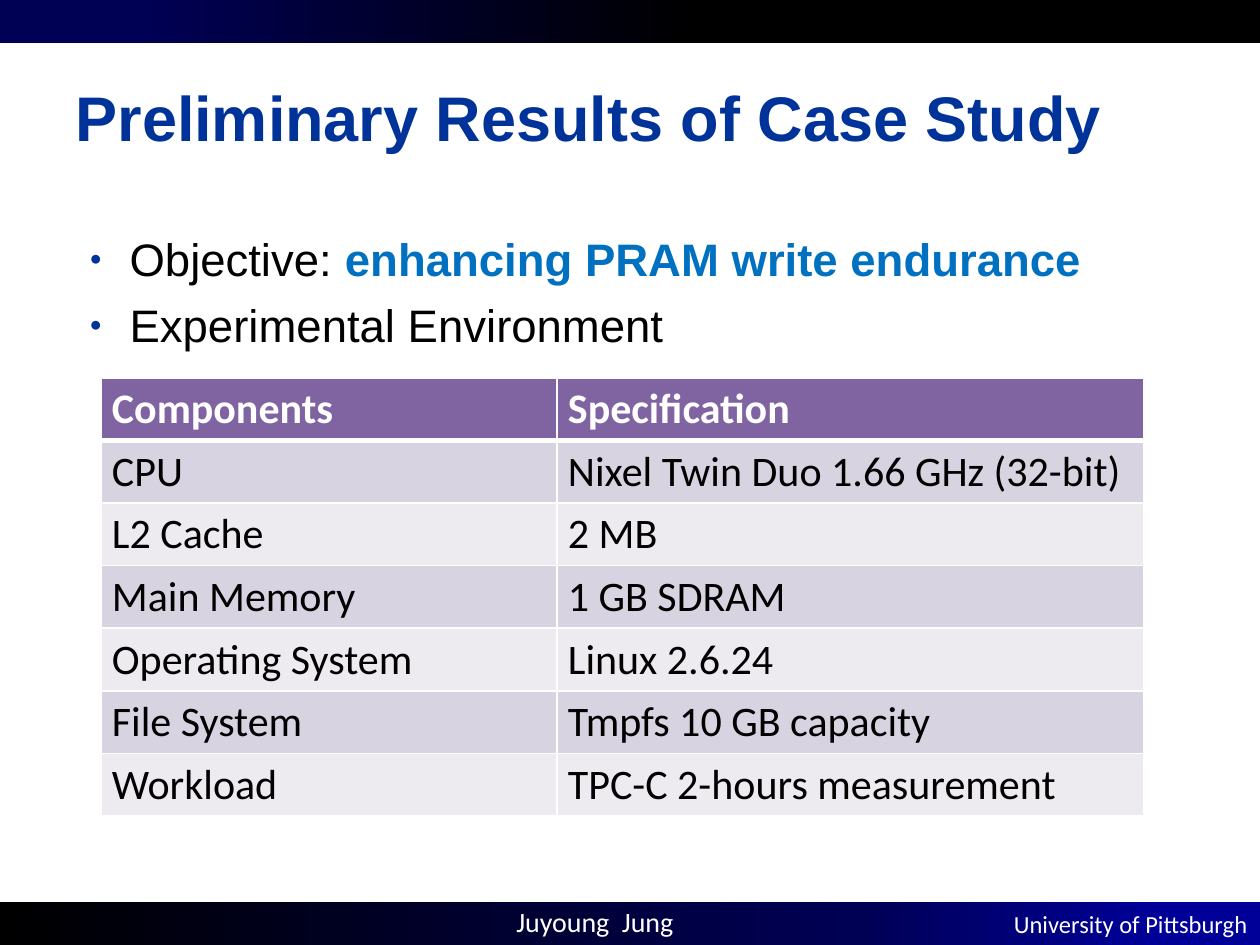
from copy import deepcopy

from lxml import etree
from pptx import Presentation
from pptx.dml.color import RGBColor
from pptx.enum.shapes import MSO_SHAPE
from pptx.enum.text import MSO_ANCHOR, MSO_AUTO_SIZE, PP_ALIGN
from pptx.oxml.ns import qn
from pptx.util import Emu, Pt

PX = 914400 // 126
RECTANGLE = MSO_SHAPE.RECTANGLE
MIDDLE, TOP = MSO_ANCHOR.MIDDLE, MSO_ANCHOR.TOP
LEFT, RIGHT = PP_ALIGN.LEFT, PP_ALIGN.RIGHT
NO_AUTOFIT = MSO_AUTO_SIZE.NONE

WHITE = RGBColor(0xFF, 0xFF, 0xFF)
BLACK = RGBColor(0x00, 0x00, 0x00)
MIDNIGHT = RGBColor(0x00, 0x00, 0x54)
NAVY = RGBColor(0x00, 0x00, 0x99)
TITLE_BLUE = RGBColor(0x00, 0x33, 0x99)
ACCENT_BLUE = RGBColor(0x00, 0x70, 0xC0)
HEADER_PURPLE = RGBColor(0x80, 0x64, 0xA2)
BAND_DARK = RGBColor(0xD8, 0xD3, 0xE0)
BAND_LIGHT = RGBColor(0xED, 0xEA, 0xF0)

TITLE = {"name": "Arial", "size": Pt(36), "bold": True, "color": TITLE_BLUE}
BODY = {"name": "Arial", "size": Pt(26), "bold": False, "color": BLACK}
EMPHASIS = {**BODY, "bold": True, "color": ACCENT_BLUE}
CELL = {"name": "Calibri", "size": Pt(24), "bold": False, "color": BLACK}
HEADER = {**CELL, "bold": True, "color": WHITE}
AUTHOR = {"name": "Calibri", "size": Pt(16), "color": WHITE}
AFFILIATION = {**AUTHOR, "size": Pt(14)}

TOP_STOPS = [(0.11, MIDNIGHT), (0.55, BLACK), (0.94, BLACK)]
BOTTOM_STOPS = [(0, BLACK), (0.68, MIDNIGHT), (0.92, NAVY)]
BULLETS = [
    [("Objective: ", BODY), ("enhancing PRAM write endurance", EMPHASIS)],
    [("Experimental Environment", BODY)],
]
ENVIRONMENT = [
    ("Components", "Specification"),
    ("CPU", "Nixel Twin Duo 1.66 GHz (32-bit)"),
    ("L2 Cache", "2 MB"),
    ("Main Memory", "1 GB SDRAM"),
    ("Operating System", "Linux 2.6.24"),
    ("File System", "Tmpfs 10 GB capacity"),
    ("Workload", "TPC-C 2-hours measurement"),
]


class SlideBuilder:
    """Hold the slide and its style, and add each kind of element in px."""

    def __init__(self, slide):
        self.slide = slide

    def lengths(self, *values):
        return [Emu(value * PX) for value in values]

    def add_text(self, paragraph, text, style):
        run = paragraph.add_run()
        run.text = text
        for name, value in style.items():
            if name == "color":
                run.font.color.rgb = value
            else:
                setattr(run.font, name, value)

    def place(self, shape, box, anchor):
        shape.left, shape.top, shape.width, shape.height = self.lengths(*box)
        frame = shape.text_frame
        frame.word_wrap = True
        frame.auto_size = NO_AUTOFIT
        frame.vertical_anchor = anchor
        return frame

    def title(self, box, text):
        frame = self.place(self.slide.shapes.title, box, MIDDLE)
        frame.paragraphs[0].alignment = LEFT
        self.add_text(frame.paragraphs[0], text, TITLE)

    def bullet(self, paragraph):
        properties = paragraph._p.get_or_add_pPr()
        properties.set("marL", str(54 * PX))
        properties.set("indent", str(-40 * PX))
        color = etree.SubElement(properties, qn("a:buClr"))
        etree.SubElement(color, qn("a:srgbClr"), val=str(TITLE_BLUE))
        etree.SubElement(properties, qn("a:buSzPct"), val="45000")
        etree.SubElement(properties, qn("a:buFont"), typeface="Arial")
        etree.SubElement(properties, qn("a:buChar"), char="●")

    def bullets(self, box, items):
        frame = self.place(self.slide.placeholders[1], box, TOP)
        for index, runs in enumerate(items):
            paragraph = frame.add_paragraph() if index else frame.paragraphs[0]
            self.bullet(paragraph)
            paragraph.space_before = Pt(6.5 if index else 0)
            for text, style in runs:
                self.add_text(paragraph, text, style)

    def bar(self, box, stops, text=""):
        shape = self.slide.shapes.add_shape(RECTANGLE, *self.lengths(*box))
        shape.shadow.inherit = False
        shape.line.fill.background()
        shape.fill.gradient()
        shape.fill.gradient_angle = 0
        stop_list = shape._element.spPr.find(".//" + qn("a:gsLst"))
        stop_list.insert(1, deepcopy(stop_list[0]))
        for stop, (position, color) in zip(shape.fill.gradient_stops, stops):
            stop.position = position
            stop.color.rgb = color
        if text:
            paragraph = shape.text_frame.paragraphs[0]
            paragraph.alignment = RIGHT
            self.add_text(paragraph, text, AFFILIATION)

    def label(self, box, text, style):
        shape = self.slide.shapes.add_textbox(*self.lengths(*box))
        frame = self.place(shape, box, TOP)
        self.add_text(frame.paragraphs[0], text, style)

    def border(self, cell, side, points):
        properties = cell._tc.get_or_add_tcPr()
        line = etree.SubElement(properties, qn("a:" + side), w=str(Pt(points)))
        fill = etree.SubElement(line, qn("a:solidFill"))
        etree.SubElement(fill, qn("a:srgbClr"), val=str(WHITE))

    def cell(self, cell, text, row):
        margins = zip(("left", "right", "top", "bottom"), self.lengths(11, 11, 6, 5))
        for side, margin in margins:
            setattr(cell, "margin_" + side, margin)
        for side in ("lnL", "lnR", "lnT", "lnB"):
            thick = (row, side) in ((0, "lnB"), (1, "lnT"))
            self.border(cell, side, 3 if thick else 1)
        band = BAND_DARK if row % 2 else BAND_LIGHT
        cell.fill.solid()
        cell.fill.fore_color.rgb = band if row else HEADER_PURPLE
        self.add_text(cell.text_frame.paragraphs[0], text, CELL if row else HEADER)

    def table(self, box, widths, rows):
        shape = self.slide.shapes.add_table(len(rows), len(widths), *self.lengths(*box))
        table = shape.table
        for column, width in zip(table.columns, self.lengths(*widths)):
            column.width = width
        for row, texts in enumerate(rows):
            for column, text in enumerate(texts):
                self.cell(table.cell(row, column), text, row)


def main():
    presentation = Presentation()
    presentation.slide_width = Emu(1260 * PX)
    presentation.slide_height = Emu(945 * PX)
    slide = presentation.slides.add_slide(presentation.slide_layouts[1])
    builder = SlideBuilder(slide)
    builder.bar((0, 0, 1260, 43), TOP_STOPS)
    builder.bar((0, 902, 1260, 43), BOTTOM_STOPS, "University of Pittsburgh")
    builder.label((504, 898, 199, 47), "Juyoung  Jung", AUTHOR)
    builder.title((63, 43, 1134, 146), "Preliminary Results of Case Study")
    builder.bullets((63, 225, 1134, 619), BULLETS)
    builder.table((101, 378, 1043, 438), (456, 587), ENVIRONMENT)
    presentation.save("out.pptx")


if __name__ == "__main__":
    main()
